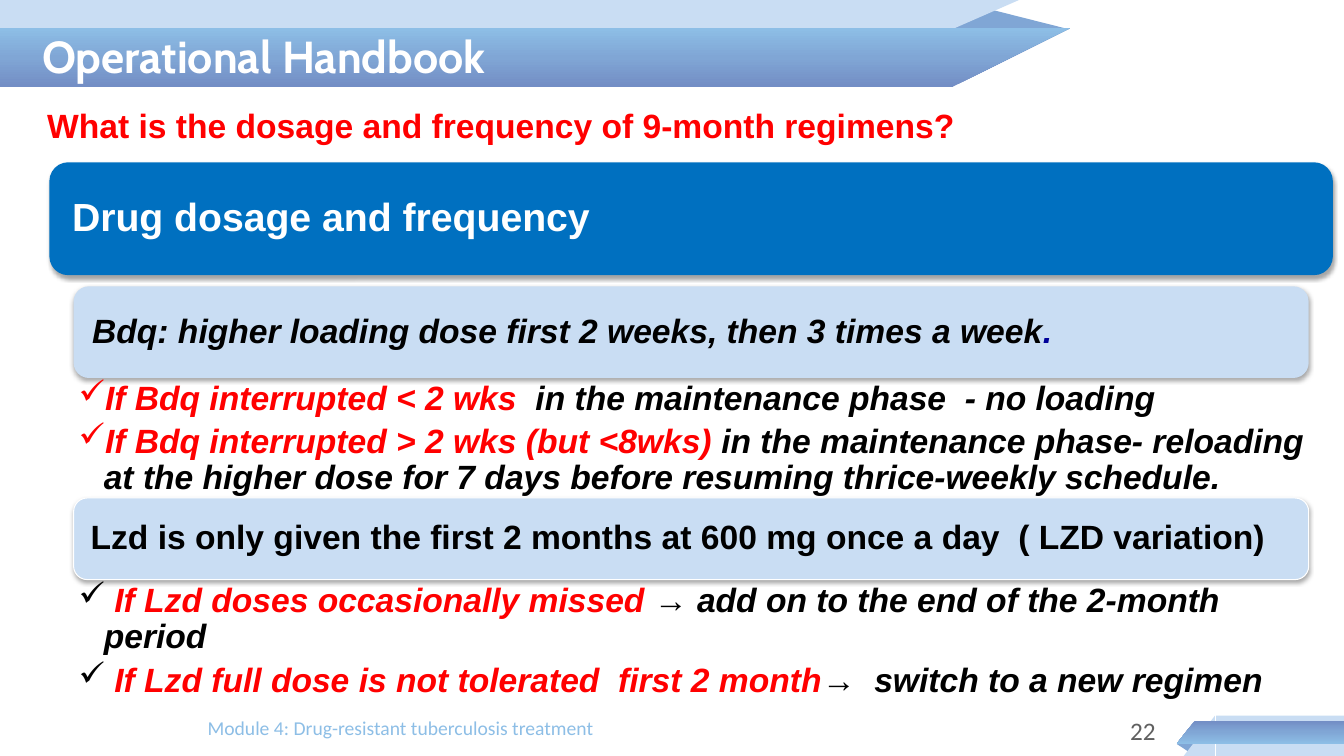
from dataclasses import dataclass
from pptx import Presentation
from pptx.dml.color import RGBColor
from pptx.enum.shapes import MSO_SHAPE
from pptx.enum.text import MSO_ANCHOR, PP_ALIGN
from pptx.oxml import parse_xml
from pptx.oxml.ns import nsdecls
from pptx.util import Inches, Pt


@dataclass
class Theme:
    fold: str = "80A6D5"
    pale: str = "C9DDF3"
    sky: str = "8DBEE6"
    dusk: str = "738EC5"
    blue: str = "0070C0"
    navy: str = "000099"
    red: str = "FF0000"
    black: str = "000000"
    white: str = "FFFFFF"
    grey: str = "606060"
    title: int = 32
    head: int = 28
    body: int = 24
    page: int = 18
    foot: int = 14


theme = Theme()
deck = Presentation()
deck.slide_width, deck.slide_height = Inches(13.33), Inches(7.5)
slide = deck.slides.add_slide(deck.slide_layouts[6])
shapes = slide.shapes


def add_form(kind, box, fill=None):
    """Add a flat shape; without a fill colour it gets the band gradient."""
    form = shapes.add_shape(kind, *map(Inches, box))
    form.shadow.inherit = False
    form.line.fill.background()
    if fill:
        form.fill.solid()
        form.fill.fore_color.rgb = RGBColor.from_string(fill)
    else:
        stops = "".join(
            f'<a:gs pos="{pos}"><a:srgbClr val="{color}"/></a:gs>'
            for pos, color in ((0, theme.dusk), (50000, theme.fold), (100000, theme.sky)))
        form._element.spPr.insert(2, parse_xml(
            f'<a:gradFill {nsdecls("a")} rotWithShape="1"><a:gsLst>{stops}</a:gsLst>'
            '<a:lin ang="5400000" scaled="0"/></a:gradFill>'))
    return form


def add_runs(para, runs, size, face="Arial", bold=True, italic=False):
    for text, color in runs:
        run = para.add_run()
        run.text = text
        font = run.font
        font.name, font.size = face, Pt(size)
        font.bold, font.italic = bold, italic
        font.color.rgb = RGBColor.from_string(color)


# Ribbons at the top left and bottom right
rect, wedge = MSO_SHAPE.RECTANGLE, MSO_SHAPE.RIGHT_TRIANGLE
ribbons = [
    ("flipH", (9.43, 0.09, 1.17, 0.2), [
        (rect, (0, -0.01, 8.15, 0.87), theme.pale),
        (wedge, (8.14, -0.01, 1.99, 0.87), theme.pale),
        (rect, (0, 0.28, 9.45, 0.58), None),
        (wedge, (9.45, 0.28, 1.16, 0.58), None)]),
    ("flipV", (11.67, 7.38, 0.18, 0.08), [
        (rect, (12.06, 7.1, 1.28, 0.4), theme.pale),
        (wedge, (11.74, 7.1, 0.31, 0.4), theme.pale),
        (rect, (11.85, 7.15, 1.48, 0.23), None),
        (wedge, (11.67, 7.15, 0.18, 0.23), None)]),
]
for flip, fold, parts in ribbons:
    corner = add_form(MSO_SHAPE.ISOSCELES_TRIANGLE, fold, theme.fold)
    corner.adjustments[0] = 0.324
    if flip == "flipV":
        for side in ("flipH", "flipV"):
            corner._element.spPr.xfrm.set(side, "1")
    for kind, box, fill in parts:
        part = add_form(kind, box, fill)
        part.rotation = 180
        part._element.spPr.xfrm.set(flip, "1")

# Title, question, footer and page number
left, right = PP_ALIGN.LEFT, PP_ALIGN.RIGHT
top, middle = MSO_ANCHOR.TOP, MSO_ANCHOR.MIDDLE
labels = [
    ("Module 4: Drug-resistant tuberculosis treatment", (1.96, 7.05, 8.02, 0.4),
     theme.foot, theme.sky, "Calibri", False, left, top),
    ("Operational Handbook", (0.32, 0.11, 8.02, 0.89),
     theme.title, theme.white, "Cabin", True, left, middle),
    ("What is the dosage and frequency of 9-month regimens?", (0.37, 0.99, 11.52, 0.46),
     theme.body, theme.red, "Arial", True, left, top),
    ("22", (10.13, 7.05, 1.43, 0.4),
     theme.page, theme.grey, "Calibri", False, right, top),
]
for text, box, size, color, face, bold, align, anchor in labels:
    frame = shapes.add_textbox(*map(Inches, box)).text_frame
    frame.word_wrap = True
    frame.vertical_anchor = anchor
    para = frame.paragraphs[0]
    para.alignment = align
    add_runs(para, [(text, color)], size, face, bold)

# Rounded bars
bars = [
    ((0.49, 1.61, 12.73, 1.12), theme.blue, 0.17, theme.head, False,
     [("Drug dosage and frequency", theme.white)]),
    ((0.73, 2.84, 12.25, 0.91), theme.pale, 0.14, theme.body, True,
     [("Bdq: higher loading dose first 2 weeks, then 3 times a week", theme.black),
      (".", theme.navy)]),
    ((0.73, 4.94, 12.25, 0.81), theme.pale, 0.13, theme.body, False,
     [("Lzd is only given the first 2 months at 600 mg once a day  ( LZD variation)",
       theme.black)]),
]
for box, fill, inset, size, italic, runs in bars:
    bar = add_form(MSO_SHAPE.ROUNDED_RECTANGLE, box, fill)
    bar._element.spPr.find("{*}effectLst").append(parse_xml(
        f'<a:outerShdw {nsdecls("a")} blurRad="{Pt(3.1)}" dist="{Pt(1.8)}" dir="5400000" '
        f'rotWithShape="0"><a:srgbClr val="{theme.black}"><a:alpha val="35000"/>'
        '</a:srgbClr></a:outerShdw>'))
    frame = bar.text_frame
    frame.word_wrap = True
    frame.vertical_anchor = middle
    frame.margin_left = frame.margin_right = Inches(inset)
    para = frame.paragraphs[0]
    para.alignment = left
    para.line_spacing = 0.9
    add_runs(para, runs, size, italic=italic)
bar.line.color.rgb = RGBColor.from_string(theme.white)
bar.line.width = Pt(0.75)

# Ticked lists under the pale bars
lists = [
    ((0.37, 3.75, 12.97, 1.2), [
        [("If Bdq interrupted < 2 wks  ", theme.red),
         ("in the maintenance phase  - no loading", theme.black)],
        [("If Bdq interrupted > 2 wks (but <8wks) ", theme.red),
         ("in the maintenance phase- reloading at the higher dose for 7 days "
          "before resuming thrice-weekly schedule.", theme.black)]]),
    ((0.37, 5.76, 12.97, 1.27), [
        [(" ", theme.black), ("If Lzd doses occasionally missed ", theme.red),
         ("→ add on to the end of the 2-month period", theme.black)],
        [(" ", theme.black),
         ("If Lzd full dose is not tolerated  first 2 month", theme.red),
         ("→  switch to a new regimen", theme.black)]]),
]
for box, items in lists:
    frame = shapes.add_textbox(*map(Inches, box)).text_frame
    frame.word_wrap = True
    frame.margin_left, frame.margin_right = Inches(0.41), Inches(0.19)
    frame.margin_top = frame.margin_bottom = Inches(0.03)
    for num, runs in enumerate(items):
        para = frame.add_paragraph() if num else frame.paragraphs[0]
        props = para._p.get_or_add_pPr()
        props.set("marL", str(Inches(0.25)))
        props.set("indent", str(Inches(-0.25)))
        props.append(parse_xml(f'<a:buChar {nsdecls("a")} char="✓"/>'))
        para.level = 1
        para.line_spacing = 0.9
        para.space_after = Pt(5)
        add_runs(para, runs, theme.body, italic=True)

deck.save("out.pptx")
